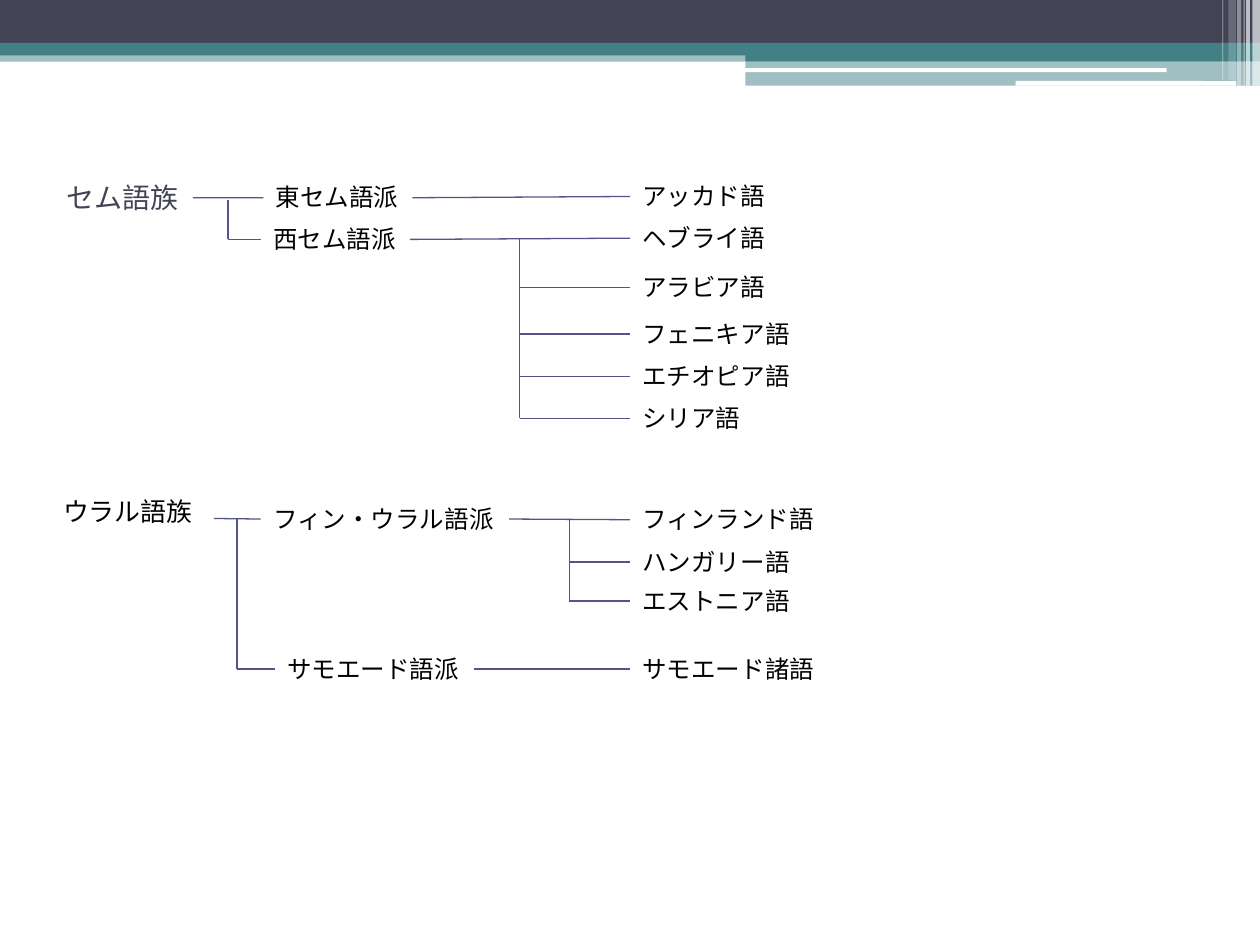
from lxml import etree
from pptx import Presentation
from pptx.dml.color import RGBColor
from pptx.enum.shapes import MSO_CONNECTOR, MSO_SHAPE
from pptx.enum.text import MSO_ANCHOR, MSO_AUTO_SIZE, PP_ALIGN
from pptx.oxml.ns import qn
from pptx.util import Pt

RECT, ROUND = MSO_SHAPE.RECTANGLE, MSO_SHAPE.ROUNDED_RECTANGLE
STRAIGHT = MSO_CONNECTOR.STRAIGHT
LEFT, RIGHT = 1, 3
SLATE = RGBColor(0x42, 0x44, 0x56)
TEAL = RGBColor(0x43, 0x80, 0x86)
WHITE = RGBColor(0xFF, 0xFF, 0xFF)
BLACK = RGBColor(0, 0, 0)
INDIGO = RGBColor(0x53, 0x54, 0x8A)

LABEL_H = 24.5
CHAR_W = 14.2
LANGUAGE_X = 360

# shape, left, top, width, height, colour, opacity in percent
BANDS = [
    (RECT, 0, 28.8, 720, 6.5, TEAL, 50),
    (RECT, 0, 0, 720, 24.5, SLATE, 100),
    (RECT, 0, 24.5, 720, 7.2, TEAL, 100),
    (RECT, 426, 28, 294, 7, TEAL, 100),
    (RECT, 426, 35, 294, 14, TEAL, 50),
    (ROUND, 425.5, 39, 241.2, 2.2, WHITE, 100),
    (ROUND, 580.3, 46.3, 126, 2.7, WHITE, 100),
]
# left, width, height, opacity in percent
STRIPES = [
    (715.7, 4.3, 49, 65), (712.1, 2.2, 49, 65), (710.6, 0.7, 49, 60),
    (707, 2.2, 49, 40), (702, 4.3, 46, 20), (698.4, 0.7, 46, 30),
]


def add_band(slide, kind, x, y, w, h, color, opacity=100):
    s = slide.shapes.add_shape(kind, Pt(x), Pt(y), Pt(w), Pt(h))
    s.shadow.inherit = False
    s.line.fill.background()
    s.fill.solid()
    s.fill.fore_color.rgb = color
    if opacity < 100:
        clr = s.fill._xPr.find(qn("a:solidFill"))[0]
        etree.SubElement(clr, qn("a:alpha")).set("val", str(opacity * 1000))


def write(shape, text, size, font, color):
    p = shape.text_frame.paragraphs[0]
    p.alignment = PP_ALIGN.LEFT
    r = p.add_run()
    r.text = text
    for name, value in {"size": Pt(size), "name": font}.items():
        setattr(r.font, name, value)
    r.font.color.rgb = color
    return p


def fill_placeholder(sp, text, box, size, color):
    sp.left, sp.top, sp.width, sp.height = map(Pt, box)
    sp.text_frame.auto_size = MSO_AUTO_SIZE.NONE
    return write(sp, text, size, "Arial", color)


def add_label(slide, text, x, mid_y):
    """Add a label one character wider than its text, centred on mid_y."""
    s = slide.shapes.add_textbox(Pt(x), Pt(mid_y - LABEL_H / 2),
                                 Pt(CHAR_W * (len(text) + 1)), Pt(LABEL_H))
    s.text_frame.word_wrap = False
    s.text_frame.auto_size = MSO_AUTO_SIZE.SHAPE_TO_FIT_TEXT
    write(s, text, 14, "TeX Gyre Schola", BLACK)
    return s


def add_line(slide, x1, y1, x2, y2):
    c = slide.shapes.add_connector(STRAIGHT, Pt(x1), Pt(y1), Pt(x2), Pt(y2))
    c.line.color.rgb = INDIGO
    c.line.width = Pt(0.75)
    etree.SubElement(c._element.spPr, qn("a:effectLst"))
    return c


def join(slide, parent, child):
    c = add_line(slide, 0, 0, 0, 0)
    c.begin_connect(parent, RIGHT)
    c.end_connect(child, LEFT)


def add_branches(slide, x, top, children):
    """Drop a trunk from top at x, with a branch to each child label."""
    mids = [(child.top + child.height / 2) / Pt(1) for child in children]
    add_line(slide, x, top, x, mids[-1])
    for child, mid in zip(children, mids):
        add_line(slide, x, mid, child.left / Pt(1), mid).end_connect(child, LEFT)


def add_languages(slide, rows):
    return [add_label(slide, text, LANGUAGE_X, y) for text, y in rows]


def add_semitic(slide, family):
    east = add_label(slide, "東セム語派", 150.5, 113)
    west = add_label(slide, "西セム語派", 149, 136.8)
    akkadian, hebrew, *others = add_languages(slide, [
        ("アッカド語", 112.3), ("ヘブライ語", 136.1), ("アラビア語", 164.2),
        ("フェニキア語", 190.8), ("エチオピア語", 215.3), ("シリア語", 239)])
    for parent, child in [(family, east), (east, akkadian), (west, hebrew)]:
        join(slide, parent, child)
    add_branches(slide, 130.3, 114.5, [west])
    add_branches(slide, 297, 136.5, others)


def add_uralic(slide, family):
    finno = add_label(slide, "フィン・ウラル語派", 149, 296.6)
    samoyed = add_label(slide, "サモエード語派", 157, 382.3)
    finnish, *others, samoyedic = add_languages(slide, [
        ("フィンランド語", 297), ("ハンガリー語", 321.1),
        ("エストニア語", 343.4), ("サモエード諸語", 382.3)])
    for parent, child in [(family, finno), (finno, finnish), (samoyed, samoyedic)]:
        join(slide, parent, child)
    add_branches(slide, 135.4, 296.6, [samoyed])
    add_branches(slide, 325.4, 296.8, others)


def main():
    prs = Presentation()
    prs.slide_width, prs.slide_height = Pt(720), Pt(540)
    slide = prs.slides.add_slide(prs.slide_layouts[1])

    for band in BANDS:
        add_band(slide, *band)
    for x, w, h, opacity in STRIPES:
        add_band(slide, RECT, x, 0, w, h, WHITE, opacity)

    title, body = slide.placeholders
    fill_placeholder(title, "セム語族", (31, 97.2, 79.2, 31.7), 16, SLATE)
    title.text_frame.vertical_anchor = MSO_ANCHOR.MIDDLE
    p = fill_placeholder(body, "ウラル語族", (20.2, 279.4, 102, 33.8), 14.8, BLACK)
    p.space_before = Pt(3)
    pPr = p._p.get_or_add_pPr()
    pPr.set("marL", str(Pt(8.64)))
    pPr.set("indent", "0")
    etree.SubElement(pPr, qn("a:buNone"))

    add_semitic(slide, title)
    add_uralic(slide, body)
    prs.save("out.pptx")


if __name__ == "__main__":
    main()
